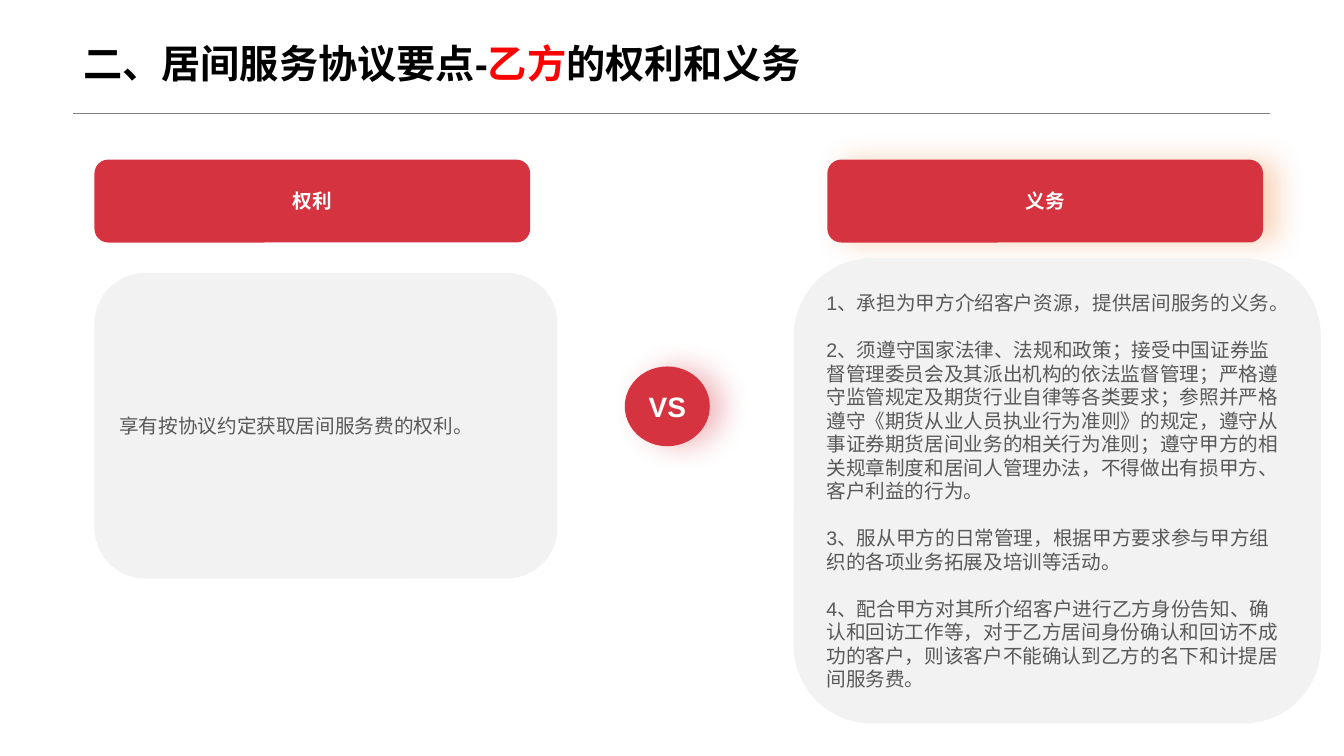
from dataclasses import dataclass

from lxml.etree import SubElement
from pptx import Presentation
from pptx.dml.color import RGBColor
from pptx.enum.shapes import MSO_CONNECTOR, MSO_SHAPE
from pptx.enum.text import MSO_ANCHOR, PP_ALIGN
from pptx.oxml.ns import qn
from pptx.slide import Slide
from pptx.text.text import _Paragraph
from pptx.util import Emu, Pt

COLORS = {
    "red": "D4333F",
    "orange": "ED7D31",
    "white": "FFFFFF",
    "panel": "F2F2F2",
    "body": "595959",
    "rule": "808080",
    "black": "000000",
    "highlight": "FF0000",
}
FONT = "Arial"
EMU_PER_PX = 9525
BADGE_TOP, BADGE_WIDTH, BADGE_HEIGHT = 152, 415, 79


@dataclass(frozen=True)
class Box:
    left: int
    top: int
    width: int
    height: int

    def emu(self) -> tuple[Emu, ...]:
        return tuple(px(n) for n in (self.left, self.top, self.width, self.height))


@dataclass(frozen=True)
class Badge:
    text: str
    box: Box
    size: int
    glow: str
    outline: MSO_SHAPE = MSO_SHAPE.ROUNDED_RECTANGLE


@dataclass(frozen=True)
class Panel:
    box: Box
    clauses: tuple[str, ...]


BADGES = (
    Badge("权利", Box(90, BADGE_TOP, BADGE_WIDTH, BADGE_HEIGHT), 14, "white"),
    Badge("义务", Box(788, BADGE_TOP, BADGE_WIDTH, BADGE_HEIGHT), 14, "orange"),
    Badge("VS", Box(595, 349, 81, 76), 20, "red", MSO_SHAPE.OVAL),
)
PANELS = (
    Panel(Box(90, 260, 441, 291), ("享有按协议约定获取居间服务费的权利。",)),
    Panel(
        Box(756, 246, 502, 443),
        (
            "1、承担为甲方介绍客户资源，提供居间服务的义务。",
            "2、须遵守国家法律、法规和政策；接受中国证券监督管理委员会及其派出机构的依法监督管理；"
            "严格遵守监管规定及期货行业自律等各类要求；参照并严格遵守《期货从业人员执业行为准则》的规定，"
            "遵守从事证券期货居间业务的相关行为准则；遵守甲方的相关规章制度和居间人管理办法，"
            "不得做出有损甲方、客户利益的行为。",
            "3、服从甲方的日常管理，根据甲方要求参与甲方组织的各项业务拓展及培训等活动。",
            "4、配合甲方对其所介绍客户进行乙方身份告知、确认和回访工作等，"
            "对于乙方居间身份确认和回访不成功的客户，则该客户不能确认到乙方的名下和计提居间服务费。",
        ),
    ),
)
TITLE = (("二、居间服务协议要点-", "black"), ("乙方", "highlight"), ("的权利和义务", "black"))


def px(length: int) -> Emu:
    return Emu(length * EMU_PER_PX)


def rgb(name: str) -> RGBColor:
    return RGBColor.from_string(COLORS[name])


def add_run(paragraph: _Paragraph, text: str, size: int, color: str, bold: bool = False) -> None:
    run = paragraph.add_run()
    run.text = text
    run.font.size = Pt(size)
    run.font.bold = bold
    run.font.color.rgb = rgb(color)
    run.font.name = FONT
    SubElement(run.font._element, qn("a:ea"), typeface=FONT)


def add_filled(slide: Slide, outline: MSO_SHAPE, box: Box, color: str):
    shape = slide.shapes.add_shape(outline, *box.emu())
    shape.shadow.inherit = False
    shape.fill.solid()
    shape.fill.fore_color.rgb = rgb(color)
    shape.line.fill.background()
    shape.text_frame.word_wrap = True
    shape.text_frame.vertical_anchor = MSO_ANCHOR.MIDDLE
    return shape


def draw_badge(slide: Slide, badge: Badge) -> None:
    shape = add_filled(slide, badge.outline, badge.box, "red")
    effects = shape._element.spPr.find(qn("a:effectLst"))
    shadow = SubElement(
        effects, qn("a:outerShdw"), blurRad=str(Pt(20)), dist=str(Pt(10)), dir="0", algn="ctr", rotWithShape="0"
    )
    glow = SubElement(shadow, qn("a:srgbClr"), val=COLORS[badge.glow])
    SubElement(glow, qn("a:alpha"), val="32000")
    paragraph = shape.text_frame.paragraphs[0]
    paragraph.alignment = PP_ALIGN.CENTER
    add_run(paragraph, badge.text, badge.size, "white", bold=True)


def draw_panel(slide: Slide, panel: Panel) -> None:
    frame = add_filled(slide, MSO_SHAPE.ROUNDED_RECTANGLE, panel.box, "panel").text_frame
    for index, clause in enumerate(panel.clauses):
        paragraph = frame.add_paragraph() if index else frame.paragraphs[0]
        paragraph.alignment = PP_ALIGN.LEFT
        if index:
            paragraph.space_before = Pt(16.8)
        add_run(paragraph, clause, 14, "body")


def draw_title(slide: Slide) -> None:
    rule = slide.shapes.add_connector(MSO_CONNECTOR.STRAIGHT, px(70), px(108), px(1210), px(108))
    rule.line.color.rgb = rgb("rule")
    rule.line.width = Pt(0.25)
    SubElement(rule._element.spPr, qn("a:effectLst"))
    frame = slide.shapes.add_textbox(*Box(70, 38, 1140, 70).emu()).text_frame
    frame.word_wrap = True
    heading = frame.paragraphs[0]
    heading.line_spacing = 0.9
    for text, color in TITLE:
        add_run(heading, text, 28, color, bold=True)


def main() -> None:
    deck = Presentation()
    deck.slide_width, deck.slide_height = px(1280), px(720)
    slide = deck.slides.add_slide(deck.slide_layouts[6])
    draw_title(slide)
    for badge in BADGES:
        draw_badge(slide, badge)
    for panel in PANELS:
        draw_panel(slide, panel)
    deck.save("out.pptx")


if __name__ == "__main__":
    main()
